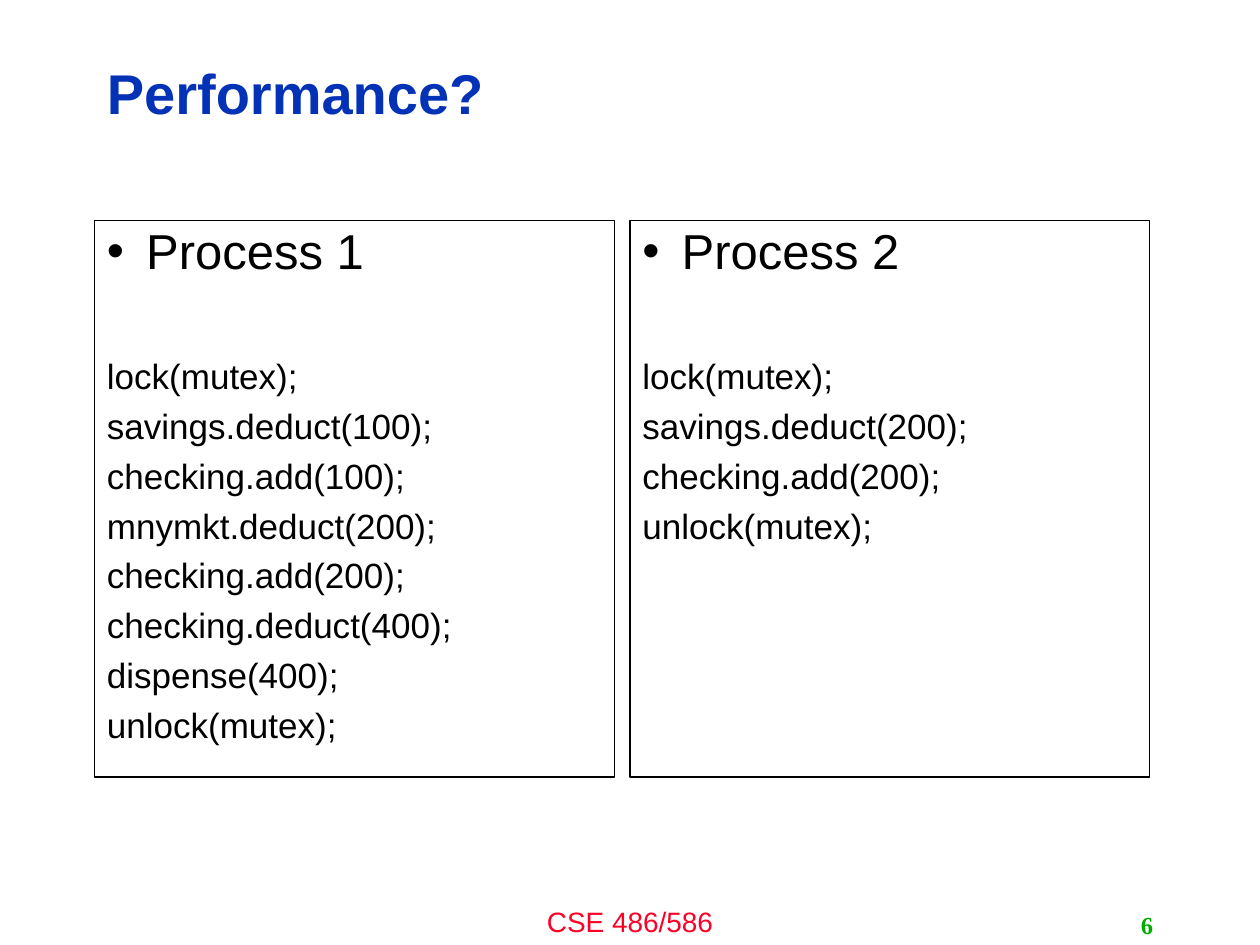
from lxml.etree import SubElement
from pptx import Presentation
from pptx.dml.color import RGBColor
from pptx.enum.shapes import MSO_SHAPE
from pptx.enum.text import MSO_ANCHOR, PP_ALIGN
from pptx.oxml.ns import qn
from pptx.util import Pt


def color(hex_string):
    return RGBColor.from_string(hex_string)


class LectureSlide:
    """Hold the lecture style and the current slide, and draw each kind of element."""

    heading = {"name": "Arial", "size": Pt(32), "bold": True}
    process = {"name": "Arial", "size": Pt(28)}
    code = {"name": "Arial", "size": Pt(20)}
    course = {"name": "Arial", "size": Pt(16)}
    number = {"name": "Times New Roman", "size": Pt(14), "bold": True}
    hanging = 22.5

    def __init__(self, slide):
        self.slide = slide

    def add_words(self, paragraph, words, font, ink, **layout):
        run = paragraph.add_run()
        run.text = words
        for target, values in ((paragraph, layout), (run.font, font)):
            for key, value in values.items():
                setattr(target, key, value)
        run.font.color.rgb = color(ink)

    def hang(self, paragraph, bullet=None):
        properties = paragraph._p.get_or_add_pPr()
        properties.set("marL", str(Pt(self.hanging)))
        properties.set("indent", str(Pt(-self.hanging)))
        if bullet:
            SubElement(properties, qn("a:buFont")).set("typeface", "Arial")
            SubElement(properties, qn("a:buChar")).set("char", bullet)

    def label(self, area, words, font, ink, anchor=MSO_ANCHOR.MIDDLE, **layout):
        frame = self.slide.shapes.add_textbox(*map(Pt, area)).text_frame
        frame.word_wrap = True
        frame.vertical_anchor = anchor
        self.add_words(frame.paragraphs[0], words, font, ink, **layout)

    def process_box(self, area, name, statements):
        box = self.slide.shapes.add_shape(MSO_SHAPE.RECTANGLE, *map(Pt, area))
        box.shadow.inherit = False
        box.fill.background()
        box.line.color.rgb = color("000000")
        box.line.width = Pt(0.75)
        frame = box.text_frame
        frame.word_wrap = True
        frame.vertical_anchor = MSO_ANCHOR.TOP
        layout = {"alignment": PP_ALIGN.LEFT, "line_spacing": 0.9}
        title = frame.paragraphs[0]
        self.add_words(title, name, self.process, "000000", **layout)
        self.hang(title, "•")
        for index, statement in enumerate(statements):
            line = frame.add_paragraph()
            gap = Pt(6.9 if index else 45.5)
            self.add_words(line, statement, self.code, "000000", space_before=gap, **layout)
            self.hang(line)


def main():
    deck = Presentation()
    deck.slide_width, deck.slide_height = Pt(720), Pt(540)
    lecture = LectureSlide(deck.slides.add_slide(deck.slide_layouts[6]))

    lecture.label((240, 513.5, 240, 26.5), "CSE 486/586", lecture.course, "FC0128",
                  MSO_ANCHOR.TOP, alignment=PP_ALIGN.CENTER)
    lecture.label((54, 26, 574.5, 58), "Performance?", lecture.heading, "0332B7",
                  line_spacing=0.9)

    processes = {
        "Process 1": ["lock(mutex);", "savings.deduct(100);", "checking.add(100);",
                      "mnymkt.deduct(200);", "checking.add(200);",
                      "checking.deduct(400);", "dispense(400);", "unlock(mutex);"],
        "Process 2": ["lock(mutex);", "savings.deduct(200);", "checking.add(200);",
                      "unlock(mutex);"],
    }
    for column, (name, statements) in enumerate(processes.items()):
        lecture.process_box((54 + 306 * column, 126, 297, 318), name, statements)

    lecture.label((516, 517, 150, 23), "6", lecture.number, "00AE00",
                  alignment=PP_ALIGN.RIGHT)
    deck.save("out.pptx")


if __name__ == "__main__":
    main()
